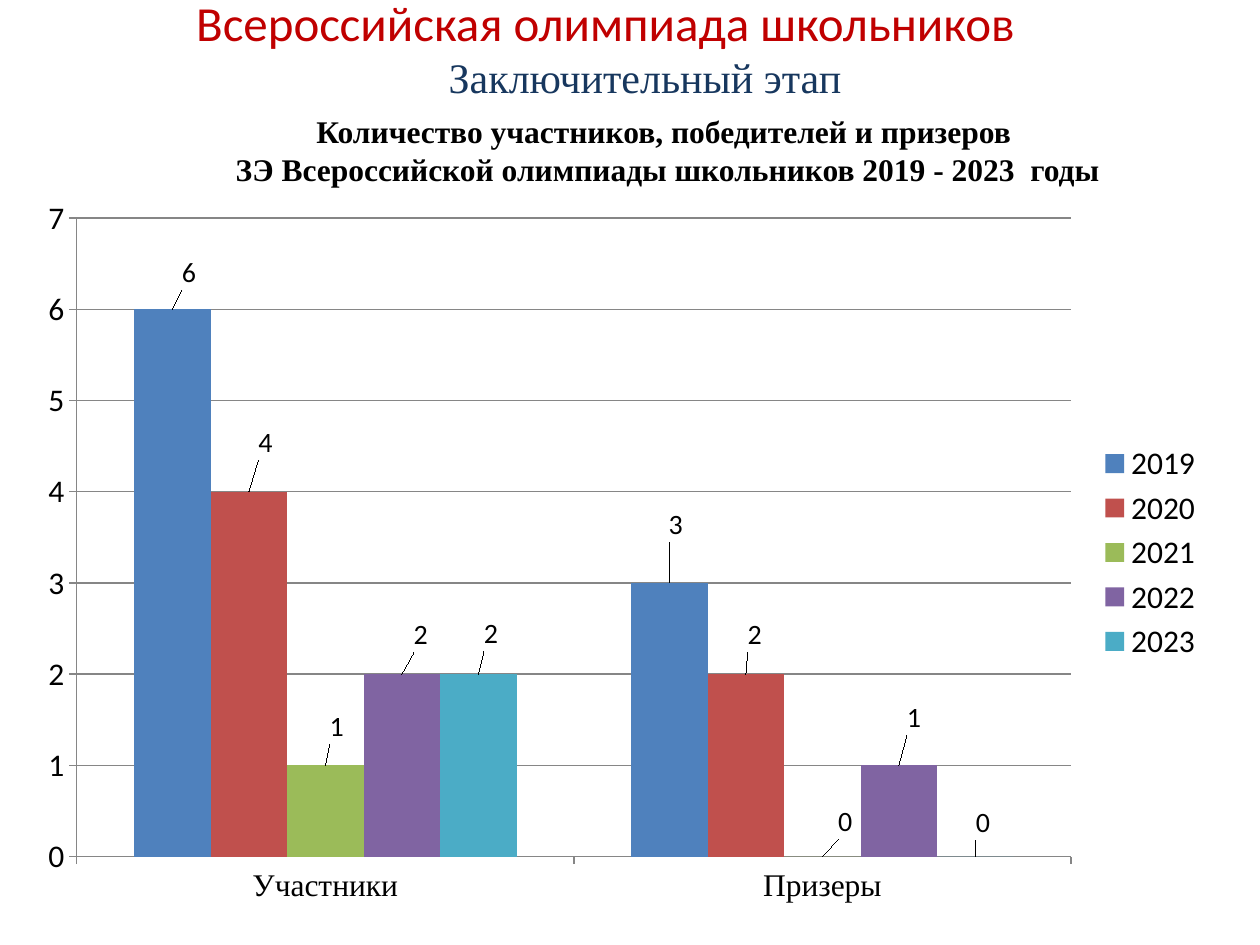
from lxml import etree
from pptx import Presentation
from pptx.chart.data import CategoryChartData
from pptx.dml.color import RGBColor
from pptx.enum.chart import (XL_CHART_TYPE, XL_LABEL_POSITION,
                             XL_LEGEND_POSITION, XL_TICK_MARK)
from pptx.enum.text import MSO_AUTO_SIZE, PP_ALIGN
from pptx.oxml.ns import qn
from pptx.util import Inches, Pt

COLUMNS = XL_CHART_TYPE.COLUMN_CLUSTERED
OUTSIDE_END = XL_LABEL_POSITION.OUTSIDE_END
RIGHT = XL_LEGEND_POSITION.RIGHT
TICK_OUT = XL_TICK_MARK.OUTSIDE
CENTER = PP_ALIGN.CENTER
FIT_SHAPE = MSO_AUTO_SIZE.SHAPE_TO_FIT_TEXT

SANS = "Calibri"
SERIF = "Times New Roman"
BLACK = "000000"
AXIS_GRAY = "868686"

CATEGORIES = ["Участники", "Призеры"]
# Year, column colour, values, label shifts in inches (right, down)
SERIES = [
    ("2019", "4F81BD", (6, 3), ((0.13, -0.11), (0.05, -0.28))),
    ("2020", "C0504D", (4, 2), ((0.13, -0.21), (0.07, -0.13))),
    ("2021", "9BBB59", (1, 0), ((0.09, -0.13), (0.18, -0.10))),
    ("2022", "8064A2", (2, 1), ((0.15, -0.13), (0.12, -0.20))),
    ("2023", "4BACC6", (2, 0), ((0.10, -0.14), (0.06, -0.09))),
]


def color(value):
    return RGBColor.from_string(value)


def manual_layout(**settings):
    layout = etree.Element(qn("c:layout"))
    manual = etree.SubElement(layout, qn("c:manualLayout"))
    for name, value in settings.items():
        etree.SubElement(manual, qn(f"c:{name}")).set("val", str(value))
    return layout


class SlideBuilder:
    def __init__(self, page):
        self.page = page

    def style(self, font, size, shade=BLACK, face=SANS, bold=False):
        font.name = face
        font.size = Pt(size)
        font.bold = bold
        font.color.rgb = color(shade)

    def text(self, area, lines, wrap=True, **style):
        box = self.page.shapes.add_textbox(*map(Inches, area))
        frame = box.text_frame
        frame.word_wrap = wrap
        frame.auto_size = FIT_SHAPE
        for index, line in enumerate(lines):
            para = frame.add_paragraph() if index else frame.paragraphs[0]
            para.alignment = CENTER
            span = para.add_run()
            span.text = line
            self.style(span.font, **style)

    def axis(self, axis, face):
        axis.major_tick_mark = TICK_OUT
        axis.format.line.color.rgb = color(AXIS_GRAY)
        self.style(axis.tick_labels.font, 18, face=face)

    def column_chart(self, area, plot_area):
        data = CategoryChartData()
        data.categories = CATEGORIES
        for year, _, values, _ in SERIES:
            data.add_series(year, values)
        chart = self.page.shapes.add_chart(
            COLUMNS, *map(Inches, area), data).chart
        self.style(chart.font, 18)
        chart.has_title = False
        chart.has_legend = True
        chart.legend.position = RIGHT
        chart.legend.include_in_layout = False

        # Axes and gridlines
        self.axis(chart.category_axis, SERIF)
        self.axis(chart.value_axis, SANS)
        chart.value_axis.minimum_scale = 0
        chart.value_axis.maximum_scale = 7
        chart.value_axis.major_unit = 1
        chart.value_axis.has_major_gridlines = True
        chart.value_axis.major_gridlines.format.line.color.rgb = color(AXIS_GRAY)

        # Columns and their shifted labels
        left, top, width, height = area
        plot = chart.plots[0]
        plot.gap_width = 150
        plot.overlap = 0
        plot.vary_by_categories = False
        for series, (_, shade, _, shifts) in zip(plot.series, SERIES):
            series.format.fill.solid()
            series.format.fill.fore_color.rgb = color(shade)
            series.data_labels.show_value = True
            self.style(series.data_labels.font, 16)
            for index in range(len(shifts)):
                label = series.points[index].data_label
                self.style(label.font, 16)
                label.position = OUTSIDE_END
        all_shifts = [shift for row in SERIES for shift in row[3]]
        for label, (right, down) in zip(chart.element.iter(qn("c:dLbl")), all_shifts):
            label.insert(1, manual_layout(x=right / width, y=down / height))

        # Fixed inner plot area
        plot_left, plot_top, plot_width, plot_height = plot_area
        holder = next(chart.element.iter(qn("c:plotArea")))
        for old in holder.findall(qn("c:layout")):
            holder.remove(old)
        holder.insert(0, manual_layout(
            layoutTarget="inner", xMode="edge", yMode="edge",
            x=(plot_left - left) / width, y=(plot_top - top) / height,
            w=plot_width / width, h=plot_height / height))


def main():
    deck = Presentation()
    deck.slide_width, deck.slide_height = Inches(10), Inches(7.5)
    builder = SlideBuilder(deck.slides.add_slide(deck.slide_layouts[6]))

    # Stage
    builder.text((0.12, 0.36, 10, 0.5), ["Заключительный этап"],
                 size=24, shade="17375E", face=SERIF)
    # Results by year
    builder.column_chart((0.2, 1.47, 9.45, 5.83), (0.61, 1.73, 7.89, 5.07))
    # Title
    builder.text((1.42, -0.11, 6.77, 0.57), ["Всероссийская олимпиада школьников"],
                 wrap=False, size=28, shade="C00000")
    # Chart heading
    builder.text((0.43, 0.84, 9.74, 0.71),
                 ["Количество участников, победителей и призеров ",
                  "ЗЭ Всероссийской олимпиады школьников 2019 - 2023  годы"],
                 size=18, face=SERIF, bold=True)
    deck.save("out.pptx")


if __name__ == "__main__":
    main()
